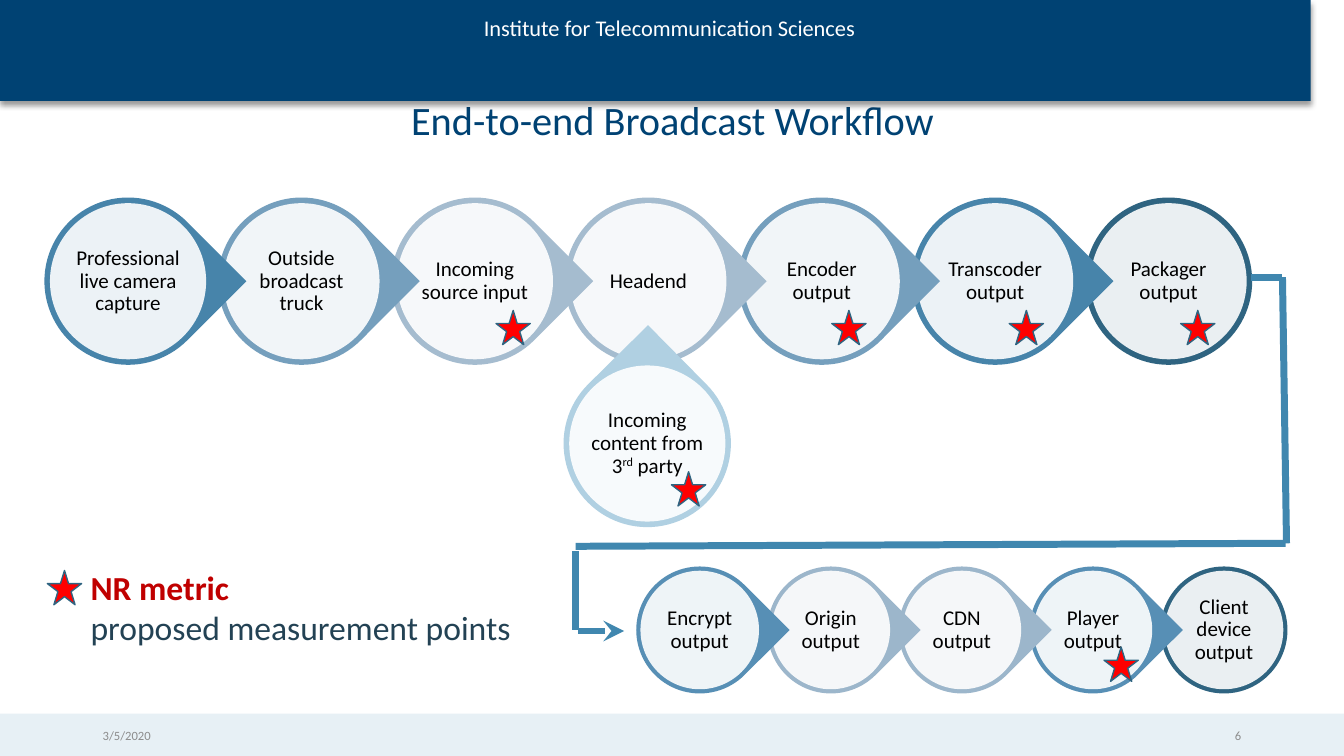
from lxml import etree
from pptx import Presentation
from pptx import util as u
from pptx.dml import color as dml
from pptx.enum import shapes, text
from pptx.oxml import ns

HUES = {
    "white": "FFFFFF", "black": "000000", "navy": "004273", "band": "E7F0F5",
    "gray": "8C8C8C", "deep": "2F6481", "steel": "4784AA", "mid": "759FBD",
    "pale": "A5BCCF", "blue": "578FB5", "mist": "9CB6CB", "sky": "B0D0E2",
    "path": "4087AF", "red": "FF0000", "wine": "C00000", "slate": "234254",
}
KIND = shapes.MSO_SHAPE
LEFT, MID, RIGHT = text.PP_ALIGN.LEFT, text.PP_ALIGN.CENTER, text.PP_ALIGN.RIGHT
TOP, HALF = text.MSO_ANCHOR.TOP, text.MSO_ANCHOR.MIDDLE


def paint(fill, hue):
    fill.solid()
    fill.fore_color.rgb = dml.RGBColor.from_string(HUES[hue])


def add_tag(node, tag, **attrs):
    return etree.SubElement(node, ns.qn(tag), attrs)


def add_part(slide, kind, box, hue, turn=0):
    part = slide.shapes.add_shape(kind, *map(u.Inches, box))
    part.shadow.inherit = False
    paint(part.fill, hue)
    part.line.fill.background()
    part.rotation = turn
    return part


def add_run(para, words, size, hue, bold=False, base=None):
    run = para.add_run()
    run.text = words
    font = run.font
    font.name, font.size, font.bold = "Calibri", u.Pt(size), bold
    paint(font.fill, hue)
    if base:
        run._r.get_or_add_rPr().set("baseline", base)


def add_text(slide, box, lines, align=LEFT, anchor=TOP, inset=None, space=None, wrap=True):
    frame = slide.shapes.add_textbox(*map(u.Inches, box)).text_frame
    frame.word_wrap = wrap
    frame.vertical_anchor = anchor
    if inset is not None:
        frame.margin_left = frame.margin_right = u.Inches(inset)
        frame.margin_top = frame.margin_bottom = u.Inches(inset)
    for i, runs in enumerate(lines):
        para = frame.add_paragraph() if i else frame.paragraphs[0]
        para.alignment = align
        if space:
            para.line_spacing = space
        for run in runs:
            add_run(para, *run)


def curve(a, b, c, d, steps=30):
    for i in range(1, steps + 1):
        t = i / steps
        s = 1 - t
        yield tuple(s**3 * p + 3 * s * s * t * q + 3 * s * t * t * r + t**3 * v
                    for p, q, r, v in zip(a, b, c, d))


def add_head(slide, wide):
    edge = [(wide, 0), (wide, 0.59), (5.7, 0.58)]
    edge += curve((5.7, 0.58), (4.34, 0.61), (2.79, 0.66), (1.85, 0.76))
    edge += curve((1.85, 0.76), (0.91, 0.86), (0.38, 0.97), (0, 0.95))
    form = slide.shapes.build_freeform(0, 0, scale=u.Inches(1))
    form.add_line_segments(edge, close=True)
    wave = form.convert_to_shape()
    paint(wave.fill, "navy")
    wave.line.fill.background()
    wave.shadow.inherit = False
    glow = wave._element.spPr.find(ns.qn("a:effectLst"))
    shade = add_tag(glow, "a:outerShdw", blurRad=str(u.Pt(4)), dist=str(u.Pt(3)),
                    dir="5400000", algn="t", rotWithShape="0")
    tint = add_tag(shade, "a:srgbClr", val=HUES["black"])
    add_tag(tint, "a:alpha", val="40000")
    add_text(slide, (4.7, 0.09, 3.93, 0.37),
             [[("Institute for Telecommunication Sciences", 16, "white")]], wrap=False)


def add_title(slide, box):
    title = slide.shapes.title
    title.left, title.top, title.width, title.height = map(u.Inches, box)
    frame = title.text_frame
    frame.vertical_anchor = TOP
    frame.margin_top = 0
    para = frame.paragraphs[0]
    para.alignment = MID
    para.line_spacing = 0.9
    add_run(para, "End-to-end Broadcast Workflow", 28.8, "navy")


def add_foot(slide, box):
    add_part(slide, KIND.RECTANGLE, box, "band")
    x, y, wide, _ = box
    for left, words, align in ((x + 0.92, "3/5/2020", LEFT), (x + wide - 3.92, "6", RIGHT)):
        add_text(slide, (left, y + 0.02, 3, 0.4), [[(words, 9, "gray")]], align, HALF)


def add_node(slide, box, runs, hue, turn=45, last=False, pad=None):
    x, y, size = box
    kind = KIND.OVAL if last else KIND.TEAR
    add_part(slide, kind, (x, y, size, size), hue, 0 if last else turn)
    rim = size / 30
    disk = add_part(slide, KIND.OVAL, (x + rim, y + rim, size - 2 * rim, size - 2 * rim), "white")
    tint = disk._element.spPr.find(ns.qn("a:solidFill"))[0]
    add_tag(tint, "a:alpha", val="90000")
    gap = size / 6
    pad = gap if pad is None else pad
    add_text(slide, (x + pad, y + gap, size - 2 * pad, size - 2 * gap),
             [runs], MID, HALF, 0.02, 0.9)


def add_chain(slide, box, pitch, nodes):
    x, y, size = box
    end = len(nodes) - 1
    for i, (words, hue) in reversed(list(enumerate(nodes))):
        add_node(slide, (x + i * pitch, y, size), [(words, 15, "black")], hue, last=i == end)


def add_route(slide, legs):
    for leg in legs:
        link = slide.shapes.add_connector(shapes.MSO_CONNECTOR.STRAIGHT, *map(u.Inches, leg))
        link.line.width = u.Pt(5)
        paint(link.line.fill, "path")
        if leg is legs[-1]:
            add_tag(link.line._get_or_add_ln(), "a:tailEnd", type="stealth")
        add_tag(link._element.spPr, "a:effectLst")


def add_stars(slide, spots, size=0.34):
    for x, y in spots:
        star = add_part(slide, KIND.STAR_5_POINT, (x, y, size, size), "red")
        paint(star.line.fill, "deep")
        star.line.width = u.Pt(1)


def add_key(slide, box):
    add_text(slide, box, [[("NR metric", 24, "wine", True)],
                          [("proposed measurement points", 24, "slate")]])
    add_stars(slide, [(box[0] - 0.33, box[1] + 0.09)])


def main():
    deck = Presentation()
    deck.slide_width, deck.slide_height = u.Inches(13.33), u.Inches(7.5)
    slide = deck.slides.add_slide(deck.slide_layouts[5])
    add_head(slide, 13.33)
    add_title(slide, (0.92, 1, 11.5, 0.85))
    add_foot(slide, (0, 7.08, 13.33, 0.42))
    add_chain(slide, (0.44, 1.96, 1.66), 1.72, [
        ("Professional live camera capture", "steel"), ("Outside broadcast truck", "mid"),
        ("Incoming source input", "pale"), ("Headend", "pale"), ("Encoder output", "mid"),
        ("Transcoder output", "steel"), ("Packager output", "deep")])
    add_chain(slide, (6.31, 5.62, 1.26), 1.3, [
        ("Encrypt output", "blue"), ("Origin output", "mist"), ("CDN output", "mist"),
        ("Player output", "blue"), ("Client device output", "deep")])
    add_route(slide, [
        (12.41, 2.75, 12.72, 2.75), (12.72, 2.75, 12.76, 5.39), (5.71, 5.47, 5.71, 6.25),
        (5.71, 5.42, 12.75, 5.39), (5.73, 6.26, 6.19, 6.26)])
    add_node(slide, (5.59, 3.57, 1.66), [
        ("Incoming content from 3", 15, "black"), ("rd", 15, "black", False, "30000"),
        (" party", 15, "black")], "sky", turn=315.4, pad=0.17)
    add_stars(slide, [(x, 3.08) for x in (4.92, 8.25, 10.01, 11.71)])
    add_stars(slide, [(6.66, 4.68), (10.95, 6.42)])
    add_key(slide, (0.8, 5.57, 4.64, 0.91))
    deck.save("out.pptx")


if __name__ == "__main__":
    main()
